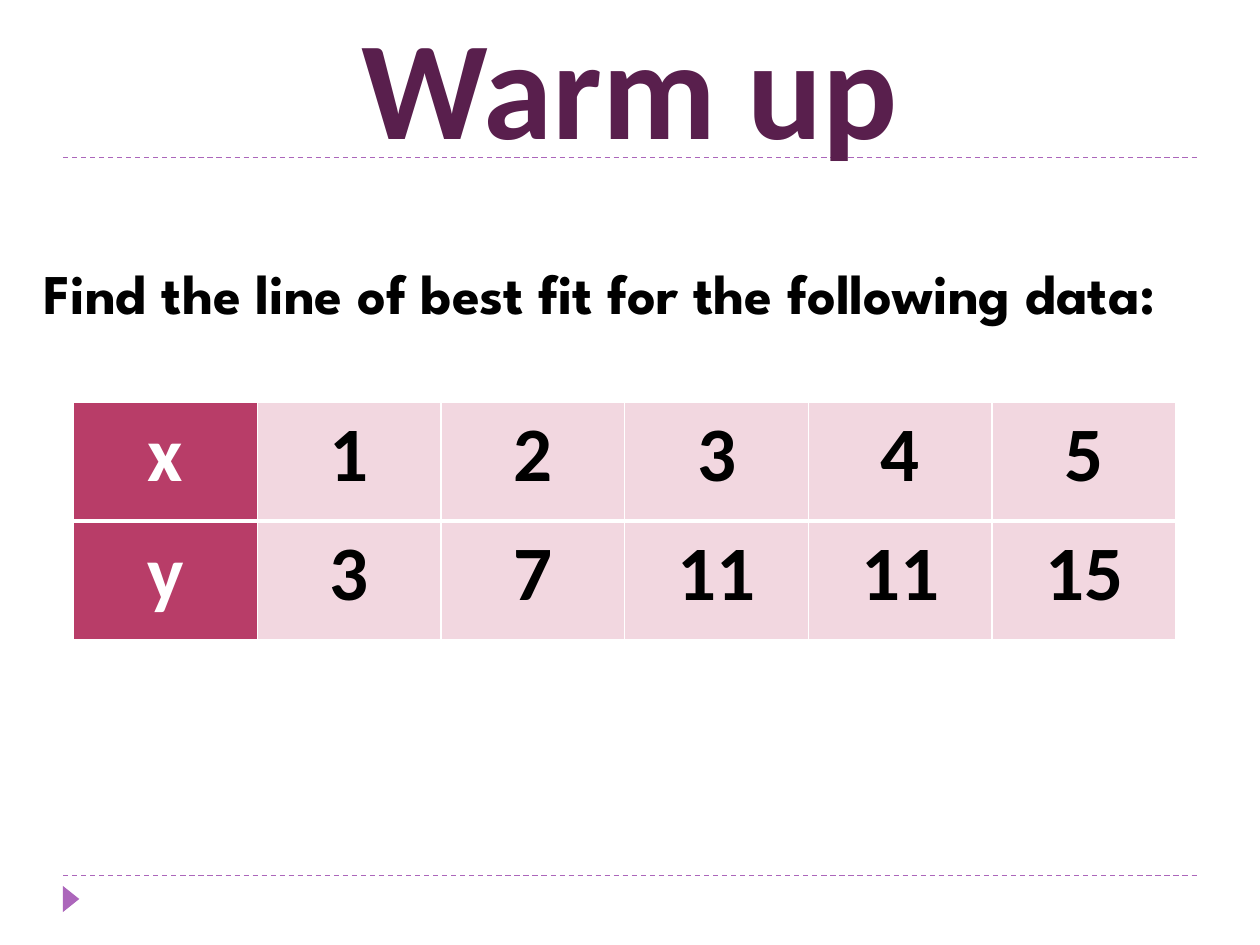
from dataclasses import dataclass

from pptx import Presentation
from pptx.dml.color import RGBColor
from pptx.enum.dml import MSO_LINE
from pptx.enum.shapes import MSO_CONNECTOR, MSO_SHAPE
from pptx.enum.text import MSO_ANCHOR, MSO_AUTO_SIZE, PP_ALIGN
from pptx.oxml.ns import qn
from pptx.util import Pt
from lxml.etree import SubElement


@dataclass(frozen=True)
class Theme:
    plum: str = "591F4D"
    lilac: str = "AC66BB"
    rose: str = "B83D68"
    blush: str = "F2D7E0"
    white: str = "FFFFFF"
    black: str = "000000"
    body: str = "Calibri"
    prompt: str = "League Spartan"
    big: int = 80
    mid: int = 32
    cell: int = 44


theme = Theme()


def add_run(para, text, face, size, color):
    run = para.add_run()
    run.text = text
    font = run.font
    font.name, font.size, font.bold = face, Pt(size), True
    font.color.rgb = RGBColor.from_string(color)


def add_edge(cell, side, width):
    """Add one solid white border; call before the cell gets its fill."""
    edge = SubElement(cell._tc.get_or_add_tcPr(), qn(f"a:{side}"), w=str(Pt(width)))
    fill = SubElement(edge, qn("a:solidFill"))
    SubElement(fill, qn("a:srgbClr"), val=theme.white)


deck = Presentation()
deck.slide_width, deck.slide_height = Pt(720), Pt(540)
slide = deck.slides.add_slide(deck.slide_layouts[5])
shapes = slide.shapes

# Dashed rules
for y in (500.4, 90):
    rule = shapes.add_connector(MSO_CONNECTOR.STRAIGHT, Pt(36), Pt(y), Pt(684), Pt(y))
    rule.line.color.rgb = RGBColor.from_string(theme.lilac)
    rule.line.width = Pt(0.75)
    rule.line.dash_style = MSO_LINE.DASH
    SubElement(rule._element.spPr, qn("a:effectLst"))

# Footer marker
mark = shapes.add_shape(MSO_SHAPE.ISOSCELES_TRIANGLE, Pt(33.1), Pt(509), Pt(15), Pt(9.4))
mark.rotation = 90
mark.shadow.inherit = False
mark.fill.solid()
mark.fill.fore_color.rgb = RGBColor.from_string(theme.lilac)
mark.line.fill.background()

# Title, brought in front of the rules
title = shapes.title
title.left, title.top, title.width, title.height = Pt(36), Pt(12.2), Pt(648), Pt(87)
frame = title.text_frame
frame.auto_size = MSO_AUTO_SIZE.NONE
frame.vertical_anchor = MSO_ANCHOR.BOTTOM
para = frame.paragraphs[0]
para.alignment = PP_ALIGN.CENTER
add_run(para, "Warm up", theme.body, theme.big, theme.plum)
shapes._spTree.append(title._element)

# Prompt
box = shapes.add_textbox(Pt(18), Pt(84.2), Pt(696), Pt(108.7))
frame = box.text_frame
frame.word_wrap = True
frame.vertical_anchor = MSO_ANCHOR.BOTTOM
frame.margin_bottom = Pt(7)
add_run(frame.paragraphs[0], "Find the line of best fit for the following data:",
        theme.prompt, theme.mid, theme.black)

# Data table
rows = [("x", 1, 2, 3, 4, 5), ("y", 3, 7, 11, 11, 15)]
grid = shapes.add_table(len(rows), len(rows[0]), Pt(42), Pt(229.7), Pt(630), Pt(136)).table
for r, row in enumerate(rows):
    for c, value in enumerate(row):
        cell = grid.cell(r, c)
        for side in ("lnL", "lnR", "lnT", "lnB"):
            inner = (r, side) in ((0, "lnB"), (1, "lnT"))
            add_edge(cell, side, 3 if inner else 1)
        head = c == 0
        cell.fill.solid()
        cell.fill.fore_color.rgb = RGBColor.from_string(theme.rose if head else theme.blush)
        para = cell.text_frame.paragraphs[0]
        para.alignment = PP_ALIGN.CENTER
        add_run(para, str(value), theme.body, theme.cell,
                theme.white if head else theme.black)

deck.save("out.pptx")
